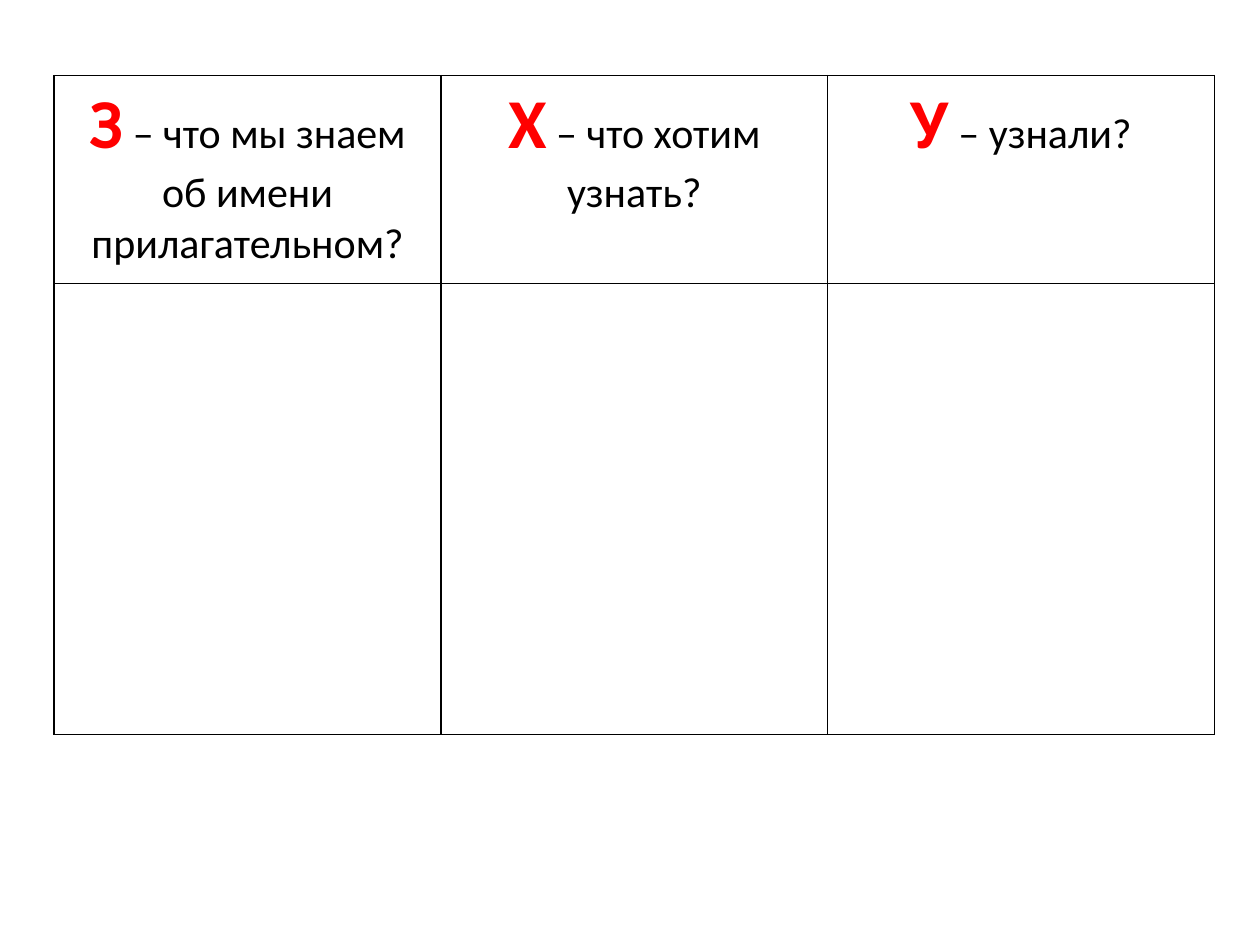
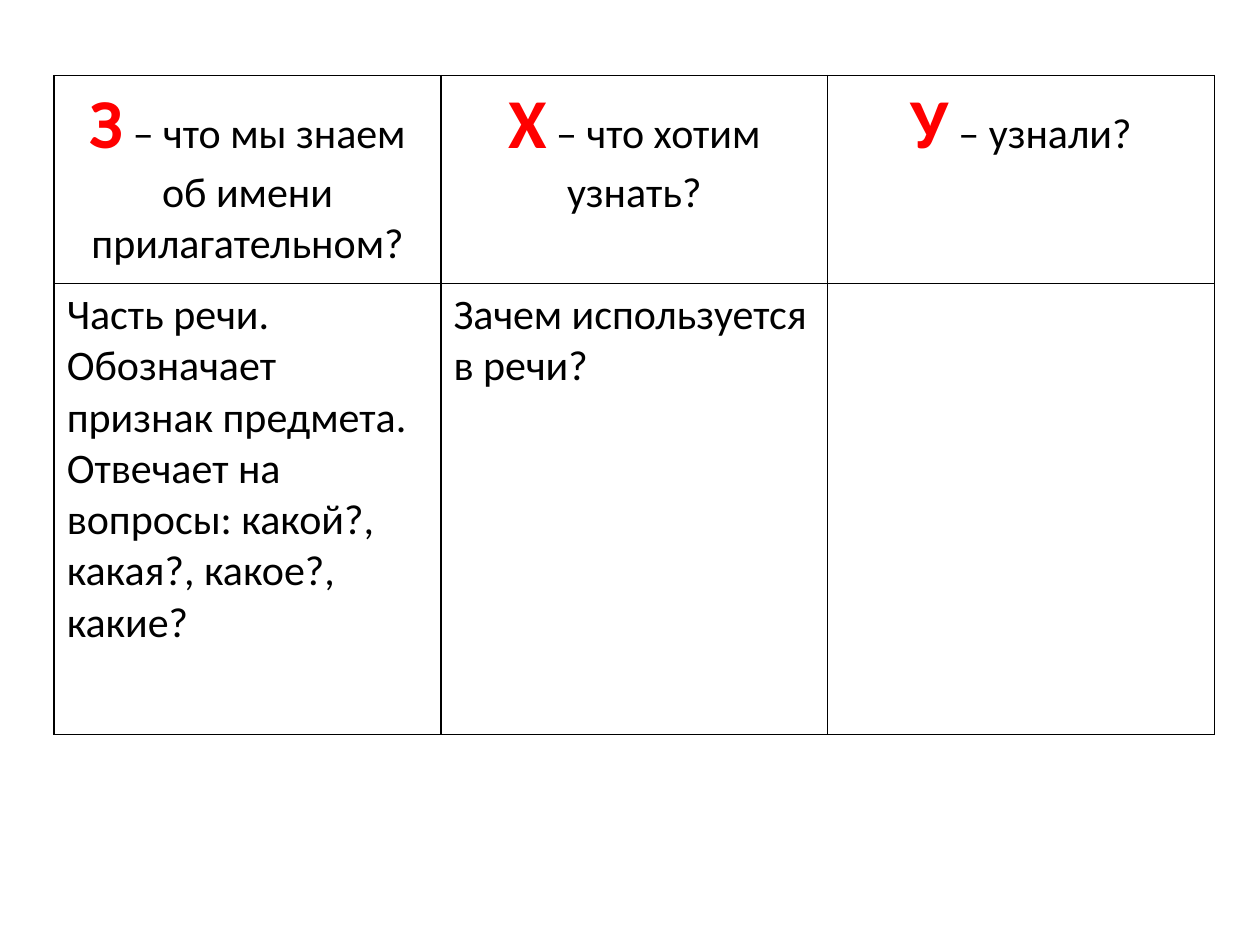
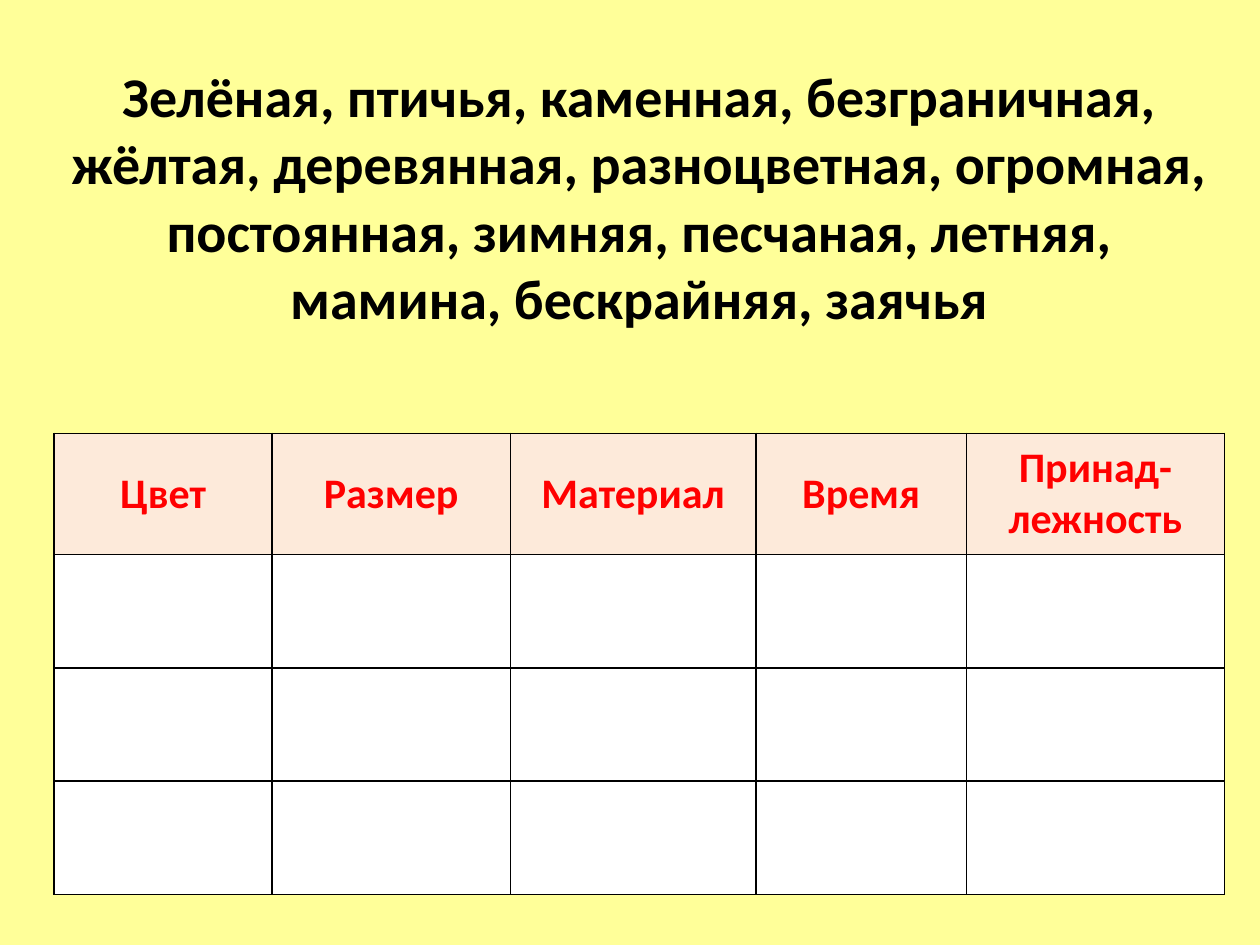
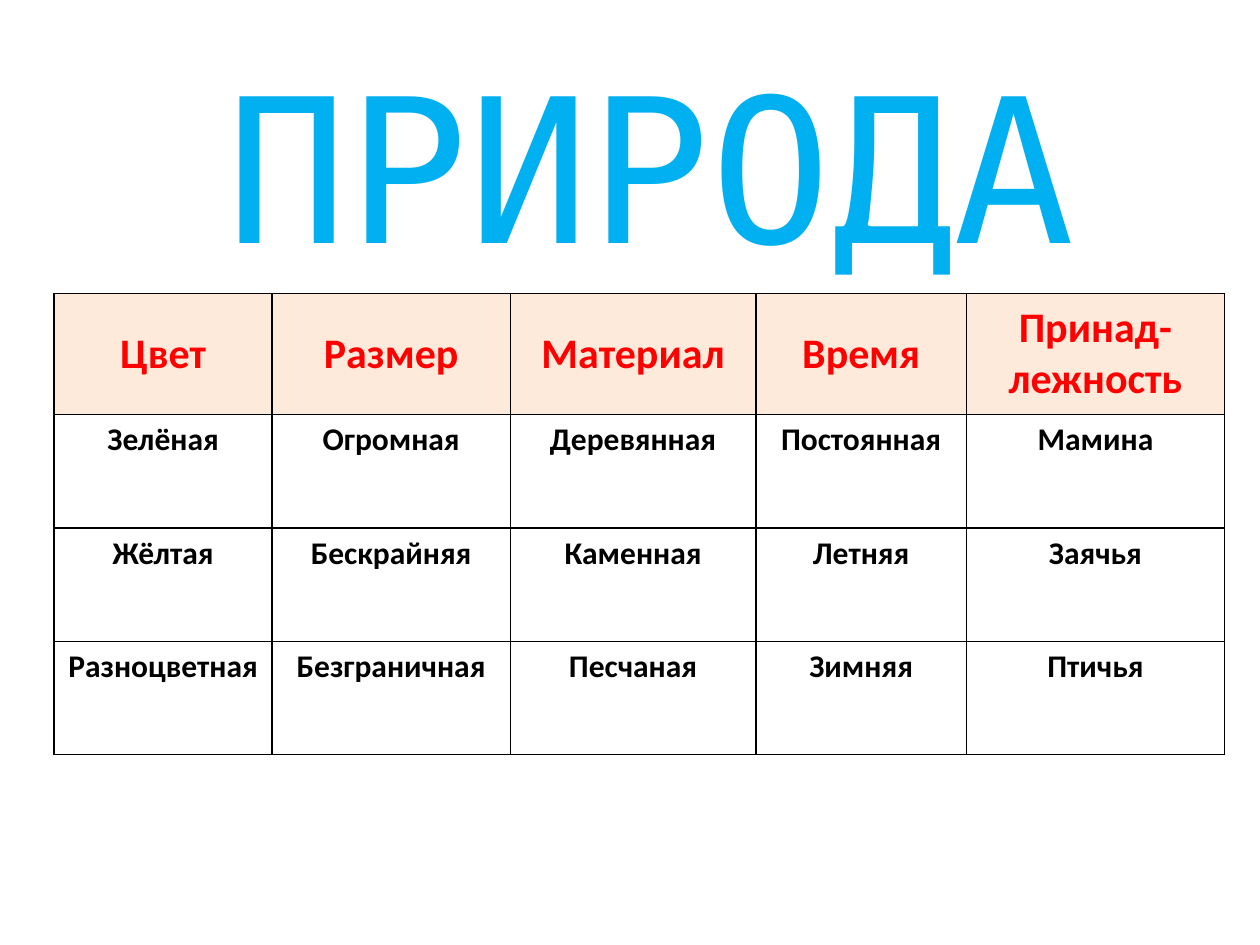
"""Build four lesson slides about adjectives: two question charts and two sorting tables."""
from dataclasses import dataclass

from lxml.etree import SubElement
from pptx import Presentation
from pptx.dml.color import RGBColor
from pptx.enum.text import MSO_ANCHOR as Anchor, MSO_AUTO_SIZE as AutoSize, PP_ALIGN as Align
from pptx.oxml import parse_xml
from pptx.oxml.ns import nsdecls, qn
from pptx.util import Inches, Pt

QUESTIONS = [
    ("З", " – что мы знаем об имени прилагательном?"),
    ("Х", " – что хотим узнать?"),
    ("У", " – узнали?"),
]
NO_ANSWERS = [[], [], []]
ANSWERS = [
    [
        "Часть речи.",
        "Обозначает признак предмета.",
        "Отвечает на вопросы: какой?, какая?, какое?, какие?",
    ],
    ["Зачем используется в речи?"],
    [],
]
WORDS = (
    "Зелёная, птичья, каменная, безграничная, жёлтая, деревянная, разноцветная, "
    "огромная, постоянная, зимняя, песчаная, летняя, мамина, бескрайняя, заячья"
)
CATEGORIES = ["Цвет", "Размер", "Материал", "Время", "Принад-лежность"]
NO_WORDS = [[""] * len(CATEGORIES)] * 3
SORTED_WORDS = [
    ["Зелёная", "Огромная", "Деревянная", "Постоянная", "Мамина"],
    ["Жёлтая", "Бескрайняя", "Каменная", "Летняя", "Заячья"],
    ["Разноцветная", "Безграничная", "Песчаная", "Зимняя", "Птичья"],
]
TOPIC = "ПРИРОДА"

LEFT = 0.43
QUESTION_COLUMNS, QUESTION_ROWS = [3.07] * 3, [1.65, 3.58]
CATEGORY_COLUMNS, CATEGORY_ROWS = [1.73, 1.89, 1.95, 1.67, 2.05], [0.96] + [0.9] * 3
BORDER_SIDES = ("lnL", "lnR", "lnT", "lnB")


@dataclass(frozen=True)
class Theme:
    white: str = "FFFFFF"
    black: str = "000000"
    red: str = "FF0000"
    blue: str = "00B0F0"
    yellow: str = "FFFF99"
    peach: str = "FDEADA"
    font: str = "Calibri"
    topic_font: str = "DejaVu Sans Mono"
    border: float = 1
    outline: float = 2.25
    topic: int = 115
    letter: int = 40
    words: int = 32
    text: int = 24
    small: int = 18


THEME = Theme()


def text_format(size, color=THEME.black, bold=False, name=THEME.font):
    return {"size": Pt(size), "bold": bold, "name": name, "color": color}


LETTER = text_format(THEME.letter, THEME.red, True)
PLAIN = text_format(THEME.text)
HEADING = text_format(THEME.text, THEME.red, True)
SORTED = text_format(THEME.small, bold=True)
WORD_LIST = text_format(THEME.words, bold=True)
TOPIC_FORMAT = text_format(THEME.topic, THEME.blue, name=THEME.topic_font)


def add_run(paragraph, text, values):
    run = paragraph.add_run()
    run.text = text
    for name, value in values.items():
        if name == "color":
            run.font.color.rgb = RGBColor.from_string(value)
        else:
            setattr(run.font, name, value)
    return run


def write(frame, paragraphs, align):
    for index, runs in enumerate(paragraphs):
        paragraph = frame.add_paragraph() if index else frame.paragraphs[0]
        paragraph.alignment = align
        for text, values in runs:
            add_run(paragraph, text, values)


def line_xml(tag, width, color):
    return parse_xml(
        f'<a:{tag} {nsdecls("a")} w="{Pt(width)}"><a:solidFill>'
        f'<a:srgbClr val="{color}"/></a:solidFill></a:{tag}>'
    )


def style_cell(cell, color):
    properties = cell._tc.get_or_add_tcPr()
    for side in BORDER_SIDES:
        properties.append(line_xml(side, THEME.border, THEME.black))
    cell.fill.solid()
    cell.fill.fore_color.rgb = RGBColor.from_string(color)


def add_grid(slide, top, columns, rows, header_color):
    frame = slide.shapes.add_table(
        len(rows), len(columns), Inches(LEFT), Inches(top),
        Inches(sum(columns)), Inches(sum(rows)),
    )
    table = frame.table
    table.first_row = table.horz_banding = False
    for column, width in zip(table.columns, columns):
        column.width = Inches(width)
    for index, (row, height) in enumerate(zip(table.rows, rows)):
        row.height = Inches(height)
        for cell in row.cells:
            style_cell(cell, THEME.white if index else header_color)
    return table


def add_text(slide, box, text, values, wrap):
    shape = slide.shapes.add_textbox(*map(Inches, box))
    frame = shape.text_frame
    frame.word_wrap = wrap
    frame.auto_size = AutoSize.SHAPE_TO_FIT_TEXT
    write(frame, [[(text, values)]], Align.CENTER)
    return frame


def add_slide(presentation, color=THEME.white):
    slide = presentation.slides.add_slide(presentation.slide_layouts[6])
    slide.background.fill.solid()
    slide.background.fill.fore_color.rgb = RGBColor.from_string(color)
    return slide


def add_question_slide(presentation, answers):
    slide = add_slide(presentation)
    table = add_grid(slide, 0.6, QUESTION_COLUMNS, QUESTION_ROWS, THEME.white)
    for index, ((letter, question), lines) in enumerate(zip(QUESTIONS, answers)):
        heading = [(letter, LETTER), (question, PLAIN)]
        write(table.cell(0, index).text_frame, [heading], Align.CENTER)
        write(table.cell(1, index).text_frame, [[(line, PLAIN)] for line in lines], Align.LEFT)


def add_category_table(slide, top, words):
    table = add_grid(slide, top, CATEGORY_COLUMNS, CATEGORY_ROWS, THEME.peach)
    for row, texts in enumerate([CATEGORIES] + words):
        for column, text in enumerate(texts):
            cell = table.cell(row, column)
            if row == 0:
                cell.vertical_anchor = Anchor.MIDDLE
            if text:
                write(cell.text_frame, [[(text, SORTED if row else HEADING)]], Align.CENTER)


def add_word_slide(presentation):
    slide = add_slide(presentation, THEME.yellow)
    add_category_table(slide, 3.44, NO_WORDS)
    add_text(slide, (LEFT, 0.44, sum(CATEGORY_COLUMNS), 2.26), WORDS, WORD_LIST, True)


def add_topic_slide(presentation):
    slide = add_slide(presentation)
    add_category_table(slide, 2.33, SORTED_WORDS)
    frame = add_text(slide, (1.54, 0.29, 7.24, 2.04), TOPIC, TOPIC_FORMAT, False)
    properties = frame.paragraphs[0].runs[0]._r.get_or_add_rPr()
    properties.insert(0, line_xml("ln", THEME.outline, THEME.white))
    SubElement(properties, qn("a:cs")).set("typeface", THEME.topic_font)


def main():
    presentation = Presentation()
    presentation.slide_width, presentation.slide_height = Inches(10), Inches(7.5)
    for answers in (NO_ANSWERS, ANSWERS):
        add_question_slide(presentation, answers)
    add_word_slide(presentation)
    add_topic_slide(presentation)
    presentation.save("out.pptx")


if __name__ == "__main__":
    main()
